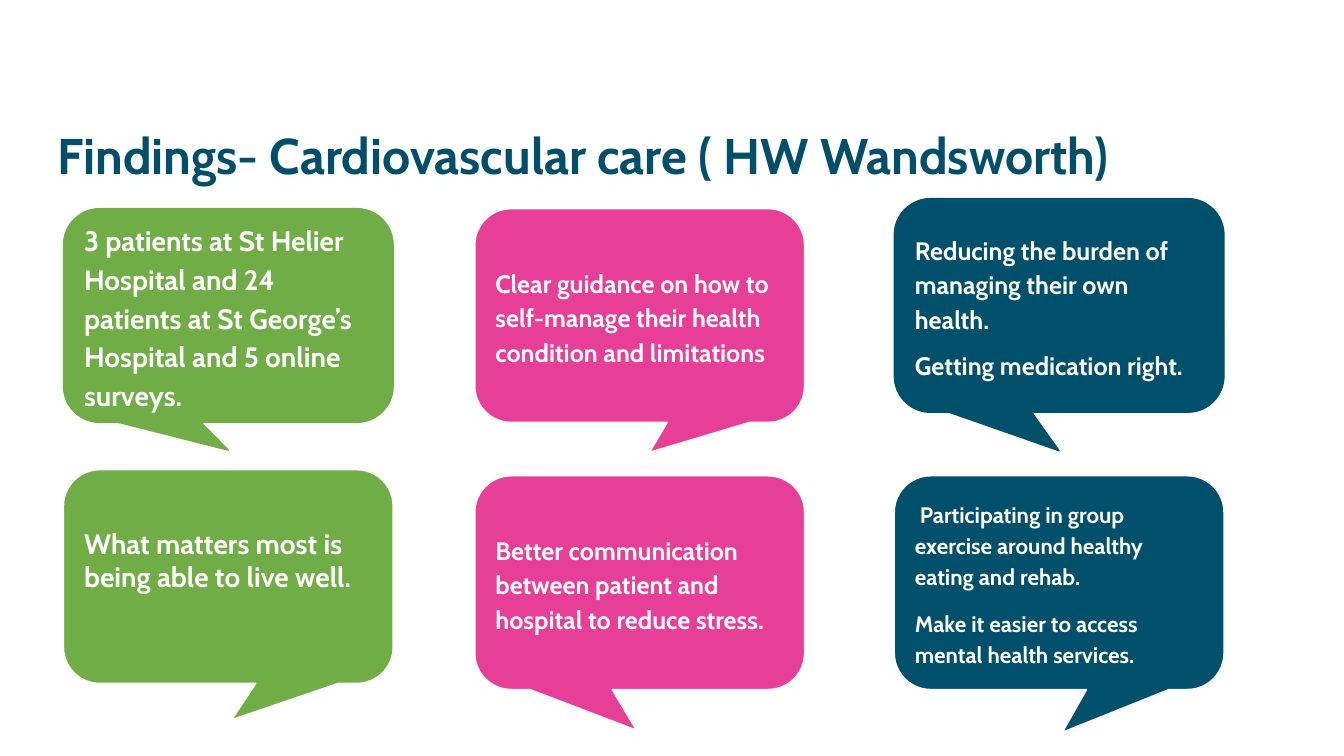
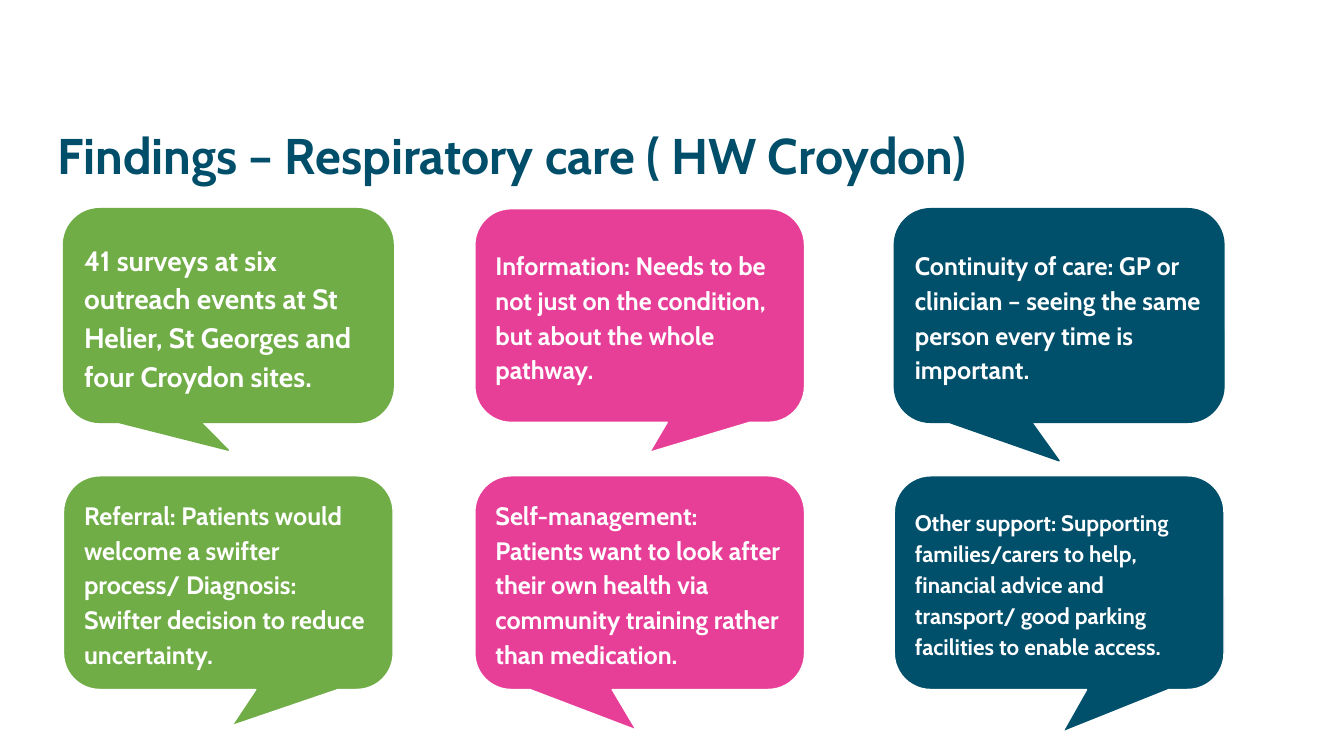
from dataclasses import dataclass

from pptx import Presentation
from pptx.dml.color import RGBColor
from pptx.enum.shapes import MSO_SHAPE
from pptx.enum.text import MSO_ANCHOR, MSO_AUTO_SIZE, PP_ALIGN
from pptx.util import Pt

PX = 9144  # EMU per px: 100 px to the inch
CALLOUT = MSO_SHAPE.ROUNDED_RECTANGULAR_CALLOUT
MIDDLE = MSO_ANCHOR.MIDDLE
NO_FIT = MSO_AUTO_SIZE.NONE
LEFT = PP_ALIGN.LEFT
TITLE_ONLY = 5


@dataclass(frozen=True)
class Theme:
    font: str = "Cabin"
    title: str = "004E6A"
    white: str = "FFFFFF"
    green: str = "70AD47"
    pink: str = "E73E97"
    navy: str = "004F6B"
    head: float = 35.8
    large: int = 20
    mid: int = 18
    small: int = 16


THEME = Theme()
SIZE = (1333, 750)
HEAD = (47, 113, 1193, 80)
COLS = (63, 471, 887)
ROWS = (207, 472)
CARD = (327, 212)
ROUND = 0.17
FILLS = (THEME.green, THEME.pink, THEME.navy)

# Per slot, row by row: tail tip as a share of the card, and outline colour
SLOTS = (
    ((0, 0.63), THEME.green),
    ((0.03, 0.64), THEME.white),
    ((0, 0.68), THEME.navy),
    ((0.01, 0.67), THEME.white),
    ((-0.01, 0.69), THEME.white),
    ((0.01, 0.7), THEME.white),
)


@dataclass(frozen=True)
class Note:
    lines: tuple
    size: int = THEME.mid
    after: int = 8
    lead: float = 1.15
    lift: int = 0  # px the card sits above its row
    foot: int = 5  # px of inset below the text


SLIDES = (
    ("Findings- Cardiovascular care ( HW Wandsworth)", (
        Note(("3 patients at St Helier Hospital and 24 patients at "
              "St George’s Hospital and 5 online surveys.",),
             size=THEME.large, after=0),
        Note(("Clear guidance on how to self-manage their health "
              "condition and limitations",), after=0),
        Note(("Reducing the burden of managing their own health.",
              "Getting medication right."), lift=10),
        Note(("What matters most is being able to live well.",),
             size=THEME.large, after=0, lead=1.0, lift=6, foot=38),
        Note(("Better communication between patient and hospital "
              "to reduce stress.",)),
        Note((" Participating in group exercise around healthy eating "
              "and rehab.",
              "Make it easier to access mental health services."),
             size=THEME.small, after=12),
    )),
    ("Findings – Respiratory care ( HW Croydon)", (
        Note(("41 surveys at six outreach events at St Helier, "
              "St Georges and four Croydon sites.",),
             size=THEME.large, after=0),
        Note(("Information: Needs to be not just on the condition, "
              "but about the whole pathway.",)),
        Note(("Continuity of care: GP or clinician – seeing the same "
              "person every time is important.",)),
        Note(("Referral: Patients would welcome a swifter process/ "
              "Diagnosis: Swifter decision to reduce uncertainty.",)),
        Note(("Self-management: Patients want to look after their own "
              "health via community training rather than medication.",)),
        Note(("Other support: Supporting families/carers to help, "
              "financial advice and transport/ good parking facilities "
              "to enable access.",), size=THEME.small, after=12),
    )),
)


def assign(item, values):
    for name, value in values.items():
        setattr(item, name, value)


def place(shape, box):
    names = ("left", "top", "width", "height")
    assign(shape, {name: part * PX for name, part in zip(names, box)})


def write(shape, lines, size, color, after=0, lead=1.0):
    frame = shape.text_frame
    assign(frame, {"word_wrap": True, "auto_size": NO_FIT,
                   "vertical_anchor": MIDDLE})
    frame.text = "\n".join(lines)
    for para in frame.paragraphs:
        assign(para, {"alignment": LEFT, "line_spacing": lead,
                      "space_before": Pt(0), "space_after": Pt(after)})
        assign(para.font, {"name": THEME.font, "size": Pt(size),
                           "bold": True})
        para.font.color.rgb = RGBColor.from_string(color)


def add_card(slide, box, fill, slot, note):
    """Draw a speech bubble in the box, with its tail below it."""
    tail, edge = slot
    card = slide.shapes.add_shape(CALLOUT, *(part * PX for part in box))
    for i, value in enumerate((*tail, ROUND)):
        card.adjustments[i] = value
    card.shadow.inherit = False
    card.fill.solid()
    card.fill.fore_color.rgb = RGBColor.from_string(fill)
    card.line.color.rgb = RGBColor.from_string(edge)
    card.line.width = Pt(1)
    write(card, note.lines, note.size, THEME.white, note.after, note.lead)
    card.text_frame.margin_bottom = note.foot * PX


def add_slide(deck, title, notes):
    slide = deck.slides.add_slide(deck.slide_layouts[TITLE_ONLY])
    head = slide.shapes.title
    place(head, HEAD)
    write(head, (title,), THEME.head, THEME.title)
    for i, (slot, note) in enumerate(zip(SLOTS, notes)):
        row, col = divmod(i, len(COLS))
        box = (COLS[col], ROWS[row] - note.lift, *CARD)
        add_card(slide, box, FILLS[col], slot, note)


def main():
    deck = Presentation()
    deck.slide_width, deck.slide_height = (part * PX for part in SIZE)
    for title, notes in SLIDES:
        add_slide(deck, title, notes)
    deck.save("out.pptx")


if __name__ == "__main__":
    main()
